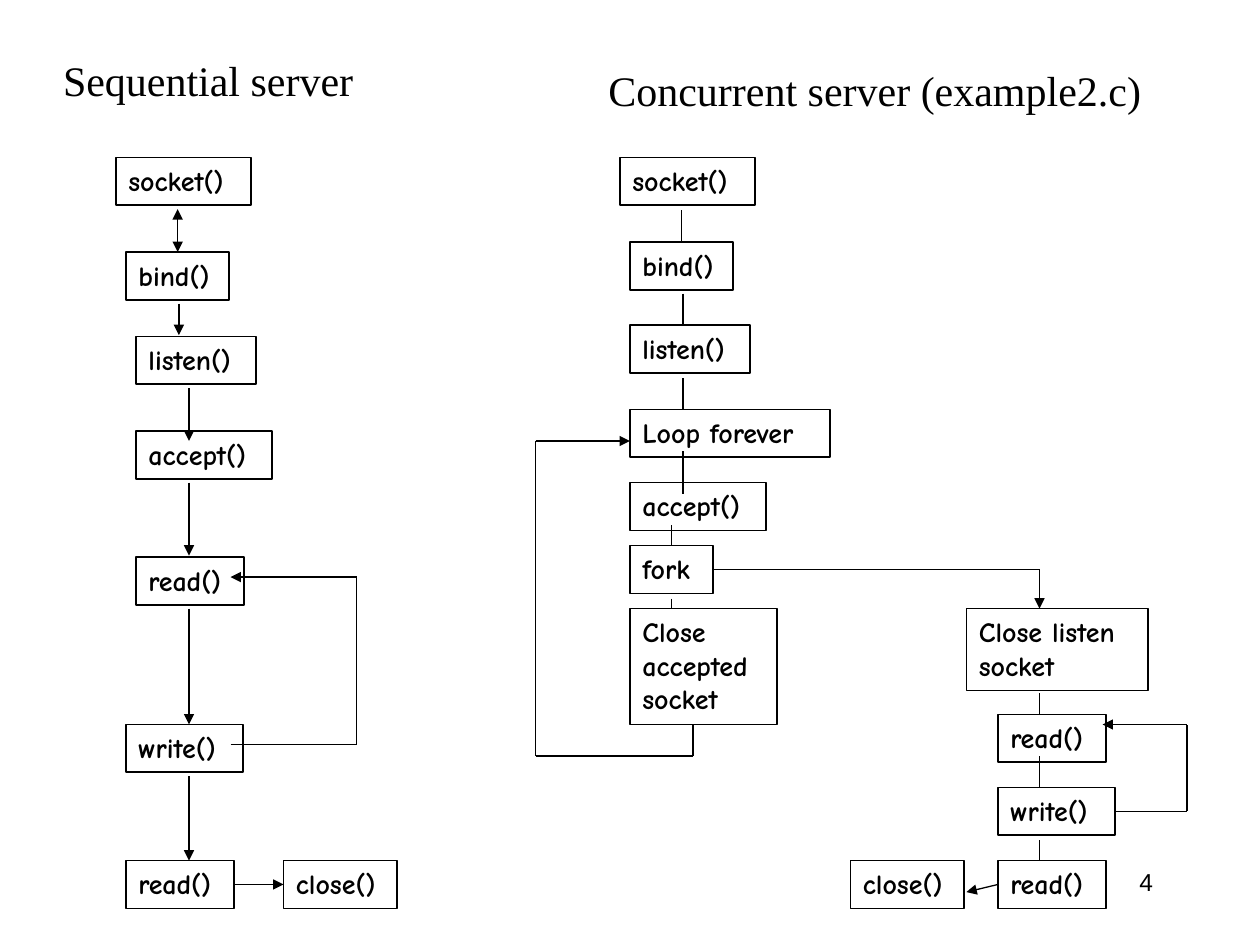
from lxml import etree
from pptx import Presentation
from pptx.dml.color import RGBColor
from pptx.enum.shapes import MSO_CONNECTOR as CONNECTOR, MSO_SHAPE as SHAPE
from pptx.enum.text import MSO_ANCHOR as ANCHOR, MSO_AUTO_SIZE as FIT, PP_ALIGN as ALIGN
from pptx.oxml.ns import qn
from pptx.util import Inches, Pt

COLORS = {"ink": "000000", "paper": "FFFFFF"}
TOP, LEFT, BOTTOM, RIGHT = range(4)
BOX_H = 0.38

# Box widths follow the label
WIDTHS = {"socket()": 1.07, "bind()": 0.82, "listen()": 0.95, "accept()": 1.08,
          "read()": 0.86, "write()": 0.93, "close()": 0.9, "Loop forever": 1.59,
          "fork": 0.66, "Close\naccepted\nsocket": 1.17, "Close listen\nsocket": 1.44}
HEIGHTS = {1: BOX_H, 2: 0.65, 3: 0.92}

# name: (label, left, top)
SEQUENTIAL_STEPS = {
    "socket": ("socket()", 0.92, 1.25),
    "bind": ("bind()", 1, 2),
    "listen": ("listen()", 1.08, 2.67),
    "accept": ("accept()", 1.08, 3.42),
    "read": ("read()", 1.08, 4.42),
    "write": ("write()", 1, 5.75),
    "last read": ("read()", 1, 6.83),
    "close": ("close()", 2.25, 6.83),
}
CONCURRENT_STEPS = {
    "socket": ("socket()", 4.92, 1.25),
    "bind": ("bind()", 5, 1.92),
    "listen": ("listen()", 5, 2.58),
    "loop": ("Loop forever", 5, 3.25),
    "accept": ("accept()", 5, 3.83),
    "fork": ("fork", 5, 4.33),
    "parent": ("Close\naccepted\nsocket", 5, 4.83),
    "child": ("Close listen\nsocket", 7.67, 4.83),
    "read": ("read()", 7.92, 5.67),
    "write": ("write()", 7.92, 6.25),
    "last read": ("read()", 7.92, 6.83),
    "close": ("close()", 6.75, 6.83),
}

# Vertical links without joins: (x, from y, to y)
SEQUENTIAL_DROPS = [(1.42, 2.41, 2.66), (1.5, 3.08, 3.5), (1.5, 3.83, 4.41),
                    (1.5, 4.83, 5.75), (1.5, 6.16, 6.83)]
CONCURRENT_DROPS = [(5.42, 2.33, 2.58), (5.42, 3, 3.25), (5.42, 3.58, 3.92),
                    (5.33, 4.75, 4.83), (8.25, 5.5, 5.67), (8.25, 6, 6.25),
                    (8.25, 6.67, 6.83)]


def ink(name):
    return RGBColor.from_string(COLORS[name])


def write_text(frame, text, font, size, bold=False, align=ALIGN.LEFT, fit=FIT.NONE, wrap=False):
    frame.word_wrap = wrap
    frame.auto_size = fit
    frame.vertical_anchor = ANCHOR.TOP
    for i, line in enumerate(text.split("\n")):
        paragraph = frame.paragraphs[0] if i == 0 else frame.add_paragraph()
        paragraph.alignment = align
        run = paragraph.add_run()
        run.text = line
        run.font.name = font
        run.font.size = Pt(size)
        run.font.bold = bold
        run.font.color.rgb = ink("ink")


def add_step(slide, label, left, top):
    height = HEIGHTS[label.count("\n") + 1]
    step = slide.shapes.add_shape(SHAPE.RECTANGLE, Inches(left), Inches(top),
                                  Inches(WIDTHS[label]), Inches(height))
    step.shadow.inherit = False
    step.fill.background()
    step.line.color.rgb = ink("ink")
    step.line.width = Pt(1)
    write_text(step.text_frame, label, "Comic Neue", 16, bold=True, fit=FIT.SHAPE_TO_FIT_TEXT)
    return step


def add_steps(slide, steps):
    return {name: add_step(slide, *place) for name, place in steps.items()}


def add_link(slide, start, stop, head=False, tail=False):
    link = slide.shapes.add_connector(CONNECTOR.STRAIGHT, *map(Inches, start + stop))
    link.line.color.rgb = ink("ink")
    link.line.width = Pt(0.75)
    outline = link.line._get_or_add_ln()
    for tag, wanted in (("a:headEnd", head), ("a:tailEnd", tail)):
        if wanted:
            etree.SubElement(outline, qn(tag), type="triangle")
    etree.SubElement(link._element.spPr, qn("a:effectLst"))
    return link


def add_route(slide, points):
    """Straight links from point to point, with the arrowhead on the last one."""
    last = len(points) - 2
    return [add_link(slide, start, stop, tail=i == last)
            for i, (start, stop) in enumerate(zip(points, points[1:]))]


def add_drops(slide, drops, tail):
    for x, start, stop in drops:
        add_link(slide, (x, start), (x, stop), tail=tail)


def draw_sequential(slide):
    steps = add_steps(slide, SEQUENTIAL_STEPS)
    add_drops(slide, SEQUENTIAL_DROPS, tail=True)
    add_link(slide, (1.41, 1.66), (1.41, 2), head=True,
             tail=True).end_connect(steps["bind"], TOP)
    finish = add_link(slide, (1.86, 7.02), (2.25, 7.02), tail=True)
    finish.begin_connect(steps["last read"], RIGHT)
    finish.end_connect(steps["close"], LEFT)
    # Loop from write back to read
    add_route(slide, [(1.83, 5.91), (2.83, 5.91), (2.83, 4.58), (1.83, 4.58)])


def draw_concurrent(slide):
    steps = add_steps(slide, CONCURRENT_STEPS)
    add_drops(slide, CONCURRENT_DROPS, tail=False)
    add_link(slide, (5.41, 1.67), (5.41, 1.92)).end_connect(steps["bind"], TOP)
    add_link(slide, (5.33, 4.17), (5.33, 4.33)).end_connect(steps["fork"], TOP)
    # Parent returns to the loop
    add_route(slide, [(5.5, 5.75), (5.5, 6), (4.25, 6), (4.25, 3.5), (5, 3.5)])
    # Fork starts the child
    spawn = add_route(slide, [(5.66, 4.52), (8.25, 4.52), (8.25, 4.83)])
    spawn[0].begin_connect(steps["fork"], RIGHT)
    # Child repeats read and write, then closes
    repeat = add_route(slide, [(8.85, 6.44), (9.42, 6.44), (9.42, 5.75), (8.75, 5.75)])
    repeat[0].begin_connect(steps["write"], RIGHT)
    finish = add_link(slide, (7.92, 7.02), (7.67, 7.08), tail=True)
    finish.begin_connect(steps["last read"], LEFT)


def add_label(slide, left, top, width, height, text, font, size, **style):
    label = slide.shapes.add_textbox(*map(Inches, (left, top, width, height)))
    write_text(label.text_frame, text, font, size, **style)


def main():
    deck = Presentation()
    deck.slide_width, deck.slide_height = Inches(10), Inches(7.5)
    slide = deck.slides.add_slide(deck.slide_layouts[5])
    slide.background.fill.solid()
    slide.background.fill.fore_color.rgb = ink("paper")

    # Headings: the title is wide enough to stay on one line
    heading = slide.shapes.title
    heading.left, heading.top = Inches(0.4), Inches(0.38)
    heading.width, heading.height = Inches(3), Inches(0.5)
    write_text(heading.text_frame, "Sequential server", "Times New Roman", 24)
    add_label(slide, 4.73, 0.46, 4.43, 0.5, "Concurrent server (example2.c)",
              "Times New Roman", 24, fit=FIT.SHAPE_TO_FIT_TEXT)

    # Flowcharts
    draw_sequential(slide)
    draw_concurrent(slide)

    # Page number
    add_label(slide, 7.17, 6.83, 2.08, 0.5, "4", "Arial", 14, align=ALIGN.RIGHT, wrap=True)

    deck.save("out.pptx")


if __name__ == "__main__":
    main()
